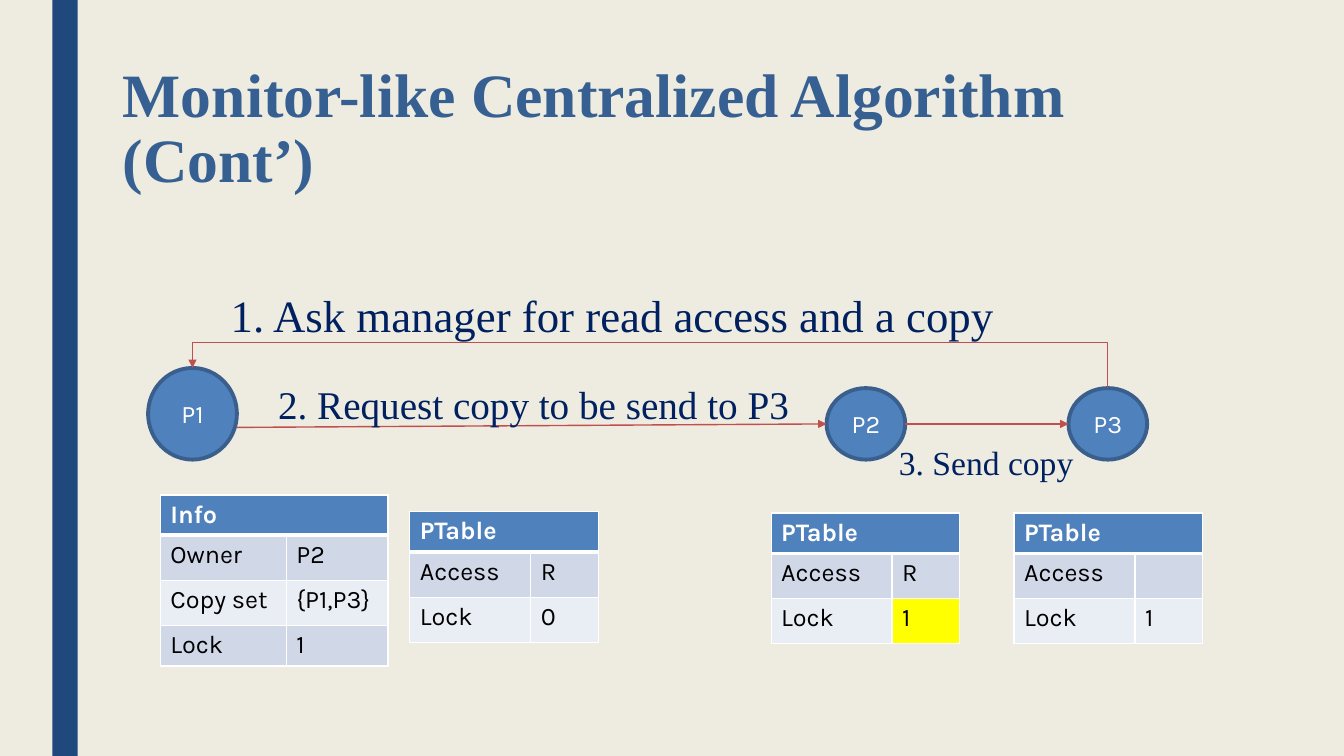
from dataclasses import dataclass

from lxml.etree import SubElement
from pptx import Presentation
from pptx.dml.color import RGBColor
from pptx.enum.shapes import MSO_CONNECTOR, MSO_SHAPE
from pptx.enum.text import MSO_ANCHOR, MSO_AUTO_SIZE, PP_ALIGN
from pptx.oxml import parse_xml
from pptx.oxml.ns import nsdecls, qn
from pptx.util import Pt


@dataclass(frozen=True)
class Theme:
    background: str = "EEECE1"
    bar: str = "1F497D"
    accent: str = "4F81BD"
    outline: str = "3A5F8C"
    arrow: str = "C0504D"
    title: str = "376092"
    label: str = "002060"
    white: str = "FFFFFF"
    black: str = "000000"
    bands: tuple = ("D0D8E8", "E9EDF4")
    highlight: str = "FFFF00"
    serif: str = "Times New Roman"
    sans: str = "Karla"
    title_size: int = 44
    body_size: int = 18
    step_sizes: tuple = (32, 28, 24)


THEME = Theme()
HEADER_HEIGHT = 28.5
ROW_HEIGHT = 32.3


def color(code):
    return RGBColor.from_string(code)


def points(*values):
    return [Pt(value) for value in values]


def write(frame, text, font=THEME.sans, size=THEME.body_size, ink=THEME.black,
          bold=False, align=PP_ALIGN.LEFT, spacing=None):
    para = frame.paragraphs[0]
    para.alignment = align
    para.line_spacing = spacing
    span = para.add_run()
    span.text = text
    span.font.name = font
    span.font.size = Pt(size)
    span.font.bold = bold
    span.font.color.rgb = color(ink)


def add_plain_shape(page, kind, box, fill):
    shape = page.shapes.add_shape(kind, *points(*box))
    shape.shadow.inherit = False
    shape.fill.solid()
    shape.fill.fore_color.rgb = color(fill)
    shape.line.fill.background()
    return shape


def add_title(page, text, box):
    title = page.shapes.title
    title.left, title.top, title.width, title.height = points(*box)
    frame = title.text_frame
    frame.word_wrap = True
    frame.auto_size = MSO_AUTO_SIZE.NONE
    frame.vertical_anchor = MSO_ANCHOR.TOP
    write(frame, text, font=THEME.serif, size=THEME.title_size, ink=THEME.title,
          bold=True, spacing=0.89)


def add_process(page, name, box):
    circle = add_plain_shape(page, MSO_SHAPE.OVAL, box, THEME.accent)
    circle.line.color.rgb = color(THEME.outline)
    circle.line.width = Pt(2.75)
    frame = circle.text_frame
    frame.margin_left = frame.margin_right = 0
    frame.vertical_anchor = MSO_ANCHOR.MIDDLE
    write(frame, name, ink=THEME.white, align=PP_ALIGN.CENTER)


def add_arrow(page, start, end, kind=MSO_CONNECTOR.STRAIGHT):
    arrow = page.shapes.add_connector(kind, *points(*start, *end))
    arrow.line.color.rgb = color(THEME.arrow)
    arrow.line.width = Pt(1)
    SubElement(arrow.line._get_or_add_ln(), qn("a:tailEnd"), type="triangle")
    SubElement(arrow.element.spPr, qn("a:effectLst"))
    return arrow


def add_arrow_over(page, start, end, rise):
    """Draw an elbow arrow that climbs `rise` above its end before coming down."""
    across, drop = start[0] - end[0], start[1] - end[1]
    middle_x, middle_y = (start[0] + end[0]) / 2, (start[1] + end[1]) / 2
    arrow = add_arrow(page, (middle_x - drop / 2, middle_y - across / 2),
                      (middle_x + drop / 2, middle_y + across / 2), MSO_CONNECTOR.ELBOW)
    properties = arrow.element.spPr
    properties.xfrm.set("rot", str(270 * 60000))
    properties.xfrm.set("flipV", "1")
    guides = properties.find(qn("a:prstGeom")).get_or_add_avLst()
    bend = round((drop + rise) / drop * 100000)
    SubElement(guides, qn("a:gd"), name="adj1", fmla=f"val {bend}")


def add_step(page, text, box, size):
    label = page.shapes.add_textbox(*points(*box))
    frame = label.text_frame
    frame.word_wrap = False
    frame.auto_size = MSO_AUTO_SIZE.SHAPE_TO_FIT_TEXT
    write(frame, text, font=THEME.serif, size=size, ink=THEME.label)


def style_cell(cell, fill, top, bottom):
    """Fill a cell and give it white borders of the given top and bottom widths."""
    cell.fill.solid()
    cell.fill.fore_color.rgb = color(fill)
    properties = cell._tc.get_or_add_tcPr()
    for index, (side, width) in enumerate(zip("LRTB", (1, 1, top, bottom))):
        properties.insert(index, parse_xml(
            f'<a:ln{side} {nsdecls("a")} w="{Pt(width)}"><a:solidFill>'
            f'<a:srgbClr val="{THEME.white}"/></a:solidFill></a:ln{side}>'))


def add_state_table(page, heading, rows, corner, widths, heights, highlighted=None):
    """Add a heading across two columns over banded rows; `highlighted` is (row, column)."""
    frame = page.shapes.add_table(len(rows) + 1, 2, *points(*corner, sum(widths), sum(heights)))
    table = frame.table
    for column, width in zip(table.columns, widths):
        column.width = Pt(width)
    for row, height in zip(table.rows, heights):
        row.height = Pt(height)
    for column in range(2):
        style_cell(table.cell(0, column), THEME.accent, top=1, bottom=3)
    table.cell(0, 0).merge(table.cell(0, 1))
    write(table.cell(0, 0).text_frame, heading, ink=THEME.white, bold=True)
    for number, values in enumerate(rows, start=1):
        for column, value in enumerate(values):
            cell = table.cell(number, column)
            fill = THEME.bands[(number - 1) % 2]
            if (number, column) == highlighted:
                fill = THEME.highlight
            style_cell(cell, fill, top=3 if number == 1 else 1, bottom=1)
            if value:
                write(cell.text_frame, value)


def add_page_table(page, corner, access, lock, highlighted=None):
    add_state_table(page, "PTable", [("Access", access), ("Lock", lock)], corner,
                    (86.4, 48.2), (HEADER_HEIGHT, ROW_HEIGHT, ROW_HEIGHT), highlighted)


def add_messages(page):
    """Draw the three processes with the numbered messages between them."""
    add_process(page, "P1", (105.8, 262.8, 63.4, 65.5))
    for name, left in (("P2", 590.4), ("P3", 763.2)):
        add_process(page, name, (left, 277.2, 56.2, 51.1))
    add_arrow_over(page, (791.3, 277.2), (137.5, 262.8), rise=18)
    add_arrow(page, (169.2, 305.3), (590.4, 302.8))
    add_arrow(page, (646.6, 302.8), (763.2, 302.8))
    steps = (
        ("1. Ask manager for read access and a copy", (157.7, 202.3, 565.2, 46.1)),
        ("2. Request copy to be send to P3", (191.5, 267.8, 383, 41)),
        ("3. Send copy", (635, 311.8, 140.4, 36)),
    )
    for (text, box), size in zip(steps, THEME.step_sizes):
        add_step(page, text, box, size)


def add_tables(page):
    add_state_table(page, "Info", [("Owner", "P2"), ("Copy set", "{P1,P3}"), ("Lock", "1")],
                    (114.5, 353.5), (90, 72.7),
                    (HEADER_HEIGHT, ROW_HEIGHT, ROW_HEIGHT, HEADER_HEIGHT))
    add_page_table(page, (292.7, 365.5), "R", "0")
    add_page_table(page, (550.8, 366.5), "R", "1", highlighted=(2, 1))
    add_page_table(page, (724.3, 366.5), "", "1")


def main():
    deck = Presentation()
    deck.slide_width, deck.slide_height = points(960, 540)
    page = deck.slides.add_slide(deck.slide_layouts[5])
    page.background.fill.solid()
    page.background.fill.fore_color.rgb = color(THEME.background)
    add_plain_shape(page, MSO_SHAPE.RECTANGLE, (37.4, 0, 18, 540), THEME.bar)
    add_title(page, "Monitor-like Centralized Algorithm (Cont’)", (80.6, 42.5, 823, 116.6))
    add_messages(page)
    add_tables(page)
    deck.save("out.pptx")


if __name__ == "__main__":
    main()
